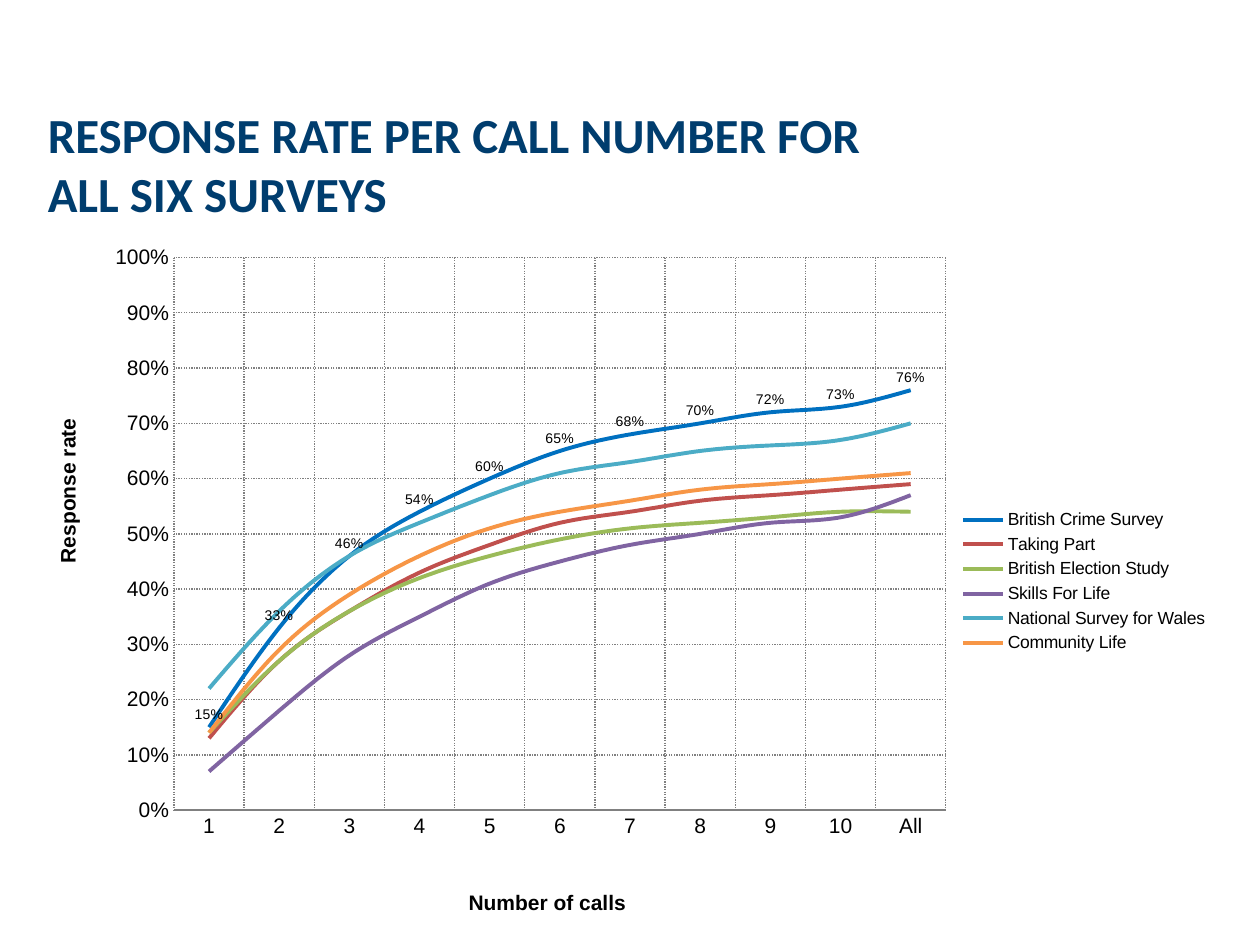
from dataclasses import dataclass

from lxml.etree import SubElement
from pptx import Presentation
from pptx.chart.data import CategoryChartData
from pptx.dml.color import RGBColor
from pptx.enum.chart import (XL_CHART_TYPE, XL_LABEL_POSITION,
                             XL_LEGEND_POSITION, XL_TICK_MARK)
from pptx.enum.dml import MSO_LINE
from pptx.enum.text import MSO_ANCHOR, MSO_AUTO_SIZE, PP_ALIGN
from pptx.oxml.ns import qn
from pptx.util import Cm, Pt


@dataclass(frozen=True)
class Theme:
    head: str = "Calibri"
    body: str = "Arial"
    navy: str = "003D6E"
    ink: str = "000000"
    grid: str = "808080"
    title: int = 28
    axis: int = 12
    legend: int = 10
    label: int = 8
    line: float = 2.25
    thin: float = 0.75


# Share of cases responding by each call
CALLS = [*map(str, range(1, 11)), "All"]
SURVEYS = [
    ("British Crime Survey", "0070C0",
     [0.15, 0.33, 0.46, 0.54, 0.6, 0.65, 0.68, 0.7, 0.72, 0.73, 0.76]),
    ("Taking Part", "C0504D",
     [0.13, 0.27, 0.36, 0.43, 0.48, 0.52, 0.54, 0.56, 0.57, 0.58, 0.59]),
    ("British Election Study", "9BBB59",
     [0.14, 0.27, 0.36, 0.42, 0.46, 0.49, 0.51, 0.52, 0.53, 0.54, 0.54]),
    ("Skills For Life", "8064A2",
     [0.07, 0.18, 0.28, 0.35, 0.41, 0.45, 0.48, 0.5, 0.52, 0.53, 0.57]),
    ("National Survey for Wales", "4BACC6",
     [0.22, 0.36, 0.46, 0.52, 0.57, 0.61, 0.63, 0.65, 0.66, 0.67, 0.7]),
    ("Community Life", "F79646",
     [0.14, 0.29, 0.39, 0.46, 0.51, 0.54, 0.56, 0.58, 0.59, 0.6, 0.61]),
]


def style(font, face, size, color, bold=False):
    font.name, font.size, font.bold = face, Pt(size), bold
    font.color.rgb = RGBColor.from_string(color)


def write(frame, text, align=None, **look):
    para = frame.paragraphs[0]
    para.alignment = align
    run = para.add_run()
    run.text = text
    style(run.font, **look)


def stroke(line, color, width, dash=None):
    line.color.rgb = RGBColor.from_string(color)
    line.width = Pt(width)
    line.dash_style = dash


def place(part, index, **sides):
    """Give a chart part a manual layout in fractions of the chart."""
    for old in part.findall(qn("c:layout")):
        part.remove(old)
    layout = SubElement(part, qn("c:layout"))
    part.insert(index, layout)
    manual = SubElement(layout, qn("c:manualLayout"))
    if "w" in sides:
        SubElement(manual, qn("c:layoutTarget")).set("val", "inner")
    for side in "xy":
        SubElement(manual, qn(f"c:{side}Mode")).set("val", "edge")
    for side, value in sides.items():
        SubElement(manual, qn(f"c:{side}")).set("val", str(value))


class Deck:
    def __init__(self, theme):
        self.theme = theme
        self.prs = Presentation()
        self.prs.slide_width, self.prs.slide_height = Cm(25.4), Cm(19.05)
        self.slide = self.prs.slides.add_slide(self.prs.slide_layouts[5])

    def title(self, text, left, top, width, height):
        box = self.slide.shapes.title
        box.left, box.top = Cm(left), Cm(top)
        box.width, box.height = Cm(width), Cm(height)
        frame = box.text_frame
        frame.word_wrap = True
        frame.auto_size = MSO_AUTO_SIZE.NONE
        frame.vertical_anchor = MSO_ANCHOR.TOP
        write(frame, text, align=PP_ALIGN.LEFT, face=self.theme.head,
              size=self.theme.title, color=self.theme.navy, bold=True)

    def axis(self, axis, text, x, y):
        look = self.theme
        axis.has_major_gridlines = True
        stroke(axis.major_gridlines.format.line, look.grid, look.thin,
               MSO_LINE.ROUND_DOT)
        axis.major_tick_mark = axis.minor_tick_mark = XL_TICK_MARK.NONE
        style(axis.tick_labels.font, look.body, look.axis, look.ink)
        write(axis.axis_title.text_frame, text, face=look.body,
              size=look.axis, color=look.ink, bold=True)
        place(axis.axis_title._element, 1, x=x, y=y)

    def chart(self, left, top, width, height):
        look = self.theme
        data = CategoryChartData(number_format="0%")
        data.categories = CALLS
        for name, _, rates in SURVEYS:
            data.add_series(name, rates)
        chart = self.slide.shapes.add_chart(
            XL_CHART_TYPE.LINE, Cm(left), Cm(top), Cm(width), Cm(height),
            data).chart
        chart.has_title = False
        style(chart.font, look.body, 18, look.ink)
        plot = chart.plots[0]
        plot.vary_by_categories = False
        place(chart._chartSpace.chart.plotArea, 0,
              x=0.114, y=0.053, w=0.653, h=0.763)

        # Axes
        self.axis(chart.category_axis, "Number of calls", 0.36, 0.92)
        stroke(chart.category_axis.format.line, look.grid, look.thin)
        rate = chart.value_axis
        self.axis(rate, "Response rate", 0.01, 0.27)
        rate.minimum_scale, rate.maximum_scale, rate.major_unit = 0, 1, 0.1
        rate.tick_labels.number_format = "0%"
        rate.tick_labels.number_format_is_linked = False
        rate.format.line.fill.background()

        # Lines
        for series, (_, color, _) in zip(plot.series, SURVEYS):
            series.smooth = True
            stroke(series.format.line, color, look.line)

        # Labels on the leading survey
        labels = plot.series[0].data_labels
        labels.show_value = True
        labels.position = XL_LABEL_POSITION.ABOVE
        labels.number_format = "0%"
        labels.number_format_is_linked = False
        style(labels.font, look.body, look.label, look.ink)

        # Legend
        chart.has_legend = True
        chart.legend.position = XL_LEGEND_POSITION.RIGHT
        chart.legend.include_in_layout = False
        style(chart.legend.font, look.body, look.legend, look.ink)


def main():
    deck = Deck(Theme())
    deck.title("RESPONSE RATE PER CALL NUMBER FOR ALL SIX SURVEYS",
               0.71, 1.98, 17.32, 2.54)
    deck.chart(0.79, 4.42, 23.83, 14.6)
    deck.prs.save("out.pptx")


if __name__ == "__main__":
    main()
